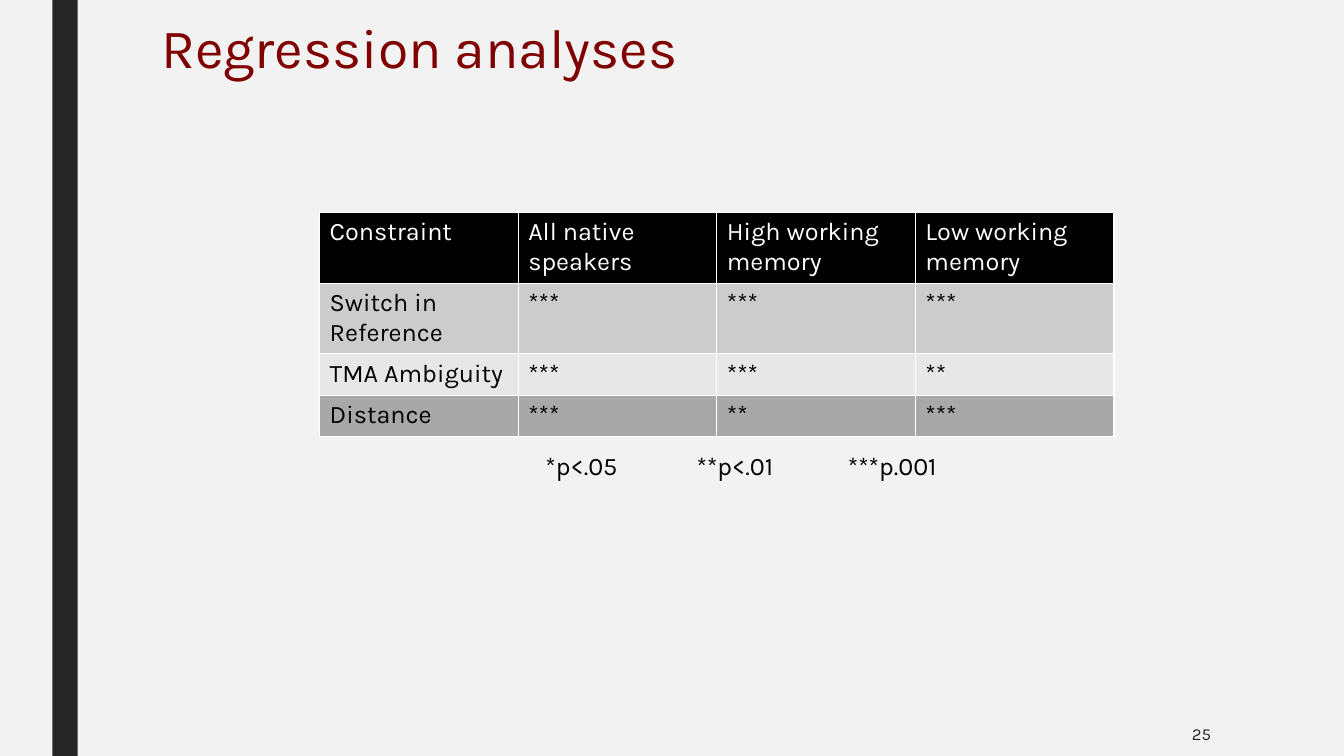
import pptx
import pptx.util
import pptx.dml.color
import pptx.enum.shapes
import pptx.enum.text
import pptx.oxml
import pptx.oxml.ns

TITLE = "Regression analyses"
ROWS = [
    ("Constraint", "All native speakers", "High working memory", "Low working memory"),
    ("Switch in Reference", "***", "***", "***"),
    ("TMA Ambiguity", "***", "***", "**"),
    ("Distance", "***", "**", "***"),
]
LEVELS = ["*p<.05", "**p<.01", "***p.001"]
PAGE = "25"
FONT = "Karla"
COLORS = {
    "back": "F2F2F2", "bar": "262626", "title": "800000",
    "ink": "000000", "white": "FFFFFF",
}
FILLS = ["000000", "CCCCCC", "E7E7E7", "A8A8A8"]
HEIGHTS = [0.69, 0.69, 0.41, 0.41]
COL = 1.97
WIDE, HIGH = 13.33, 7.5

Inches = pptx.util.Inches
Pt = pptx.util.Pt
ALIGN = pptx.enum.text.PP_ALIGN
ANCHOR = pptx.enum.text.MSO_ANCHOR


def paint(fill, color):
    fill.solid()
    fill.fore_color.rgb = pptx.dml.color.RGBColor.from_string(color)


def write(frame, text, size, color, align=ALIGN.LEFT):
    para = frame.paragraphs[0]
    para.alignment = align
    run = para.add_run()
    run.text = text
    run.font.name = FONT
    run.font.size = Pt(size)
    paint(run.font.fill, color)
    return para


def add_text(slide, box, text, size, color, align=ALIGN.LEFT, anchor=ANCHOR.TOP):
    frame = slide.shapes.add_textbox(*map(Inches, box)).text_frame
    frame.word_wrap = True
    frame.vertical_anchor = anchor
    return write(frame, text, size, color, align)


def edge(cell, color, width):
    props = cell._tc.get_or_add_tcPr()
    for at, side in enumerate(("lnL", "lnR", "lnT", "lnB")):
        line = pptx.oxml.parse_xml(
            f'<a:{side} {pptx.oxml.ns.nsdecls("a")} w="{Pt(width)}">'
            f'<a:solidFill><a:srgbClr val="{color}"/></a:solidFill></a:{side}>'
        )
        props.insert(at, line)


def add_grid(slide, left, top):
    size = (COL * len(ROWS[0]), sum(HEIGHTS))
    grid = slide.shapes.add_table(
        len(ROWS), len(ROWS[0]), *map(Inches, (left, top, *size))
    ).table
    for col in grid.columns:
        col.width = Inches(COL)
    for r, texts in enumerate(ROWS):
        grid.rows[r].height = Inches(HEIGHTS[r])
        for c, text in enumerate(texts):
            cell = grid.cell(r, c)
            paint(cell.fill, FILLS[r])
            edge(cell, COLORS["white"], 1)
            write(cell.text_frame, text, 18, COLORS["ink" if r else "white"])


def main():
    deck = pptx.Presentation()
    deck.slide_width, deck.slide_height = Inches(WIDE), Inches(HIGH)
    slide = deck.slides.add_slide(deck.slide_layouts[6])
    paint(slide.background.fill, COLORS["back"])

    bar = slide.shapes.add_shape(
        pptx.enum.shapes.MSO_SHAPE.RECTANGLE, *map(Inches, (0.52, 0, 0.25, HIGH))
    )
    bar.shadow.inherit = False
    paint(bar.fill, COLORS["bar"])
    bar.line.fill.background()

    head = add_text(slide, (1.5, 0.16, 11.22, 0.71), TITLE, 39.6, COLORS["title"])
    head.line_spacing = 0.89
    add_grid(slide, 3.17, 2.11)
    add_text(slide, (10.36, 7.06, 1.75, 0.44), PAGE, 12, COLORS["bar"],
             ALIGN.RIGHT, ANCHOR.MIDDLE)
    add_text(slide, (5.21, 4.42, 4.28, 0.4), "\t\t".join(LEVELS), 18,
             COLORS["ink"], ALIGN.CENTER)
    deck.save("out.pptx")


if __name__ == "__main__":
    main()
